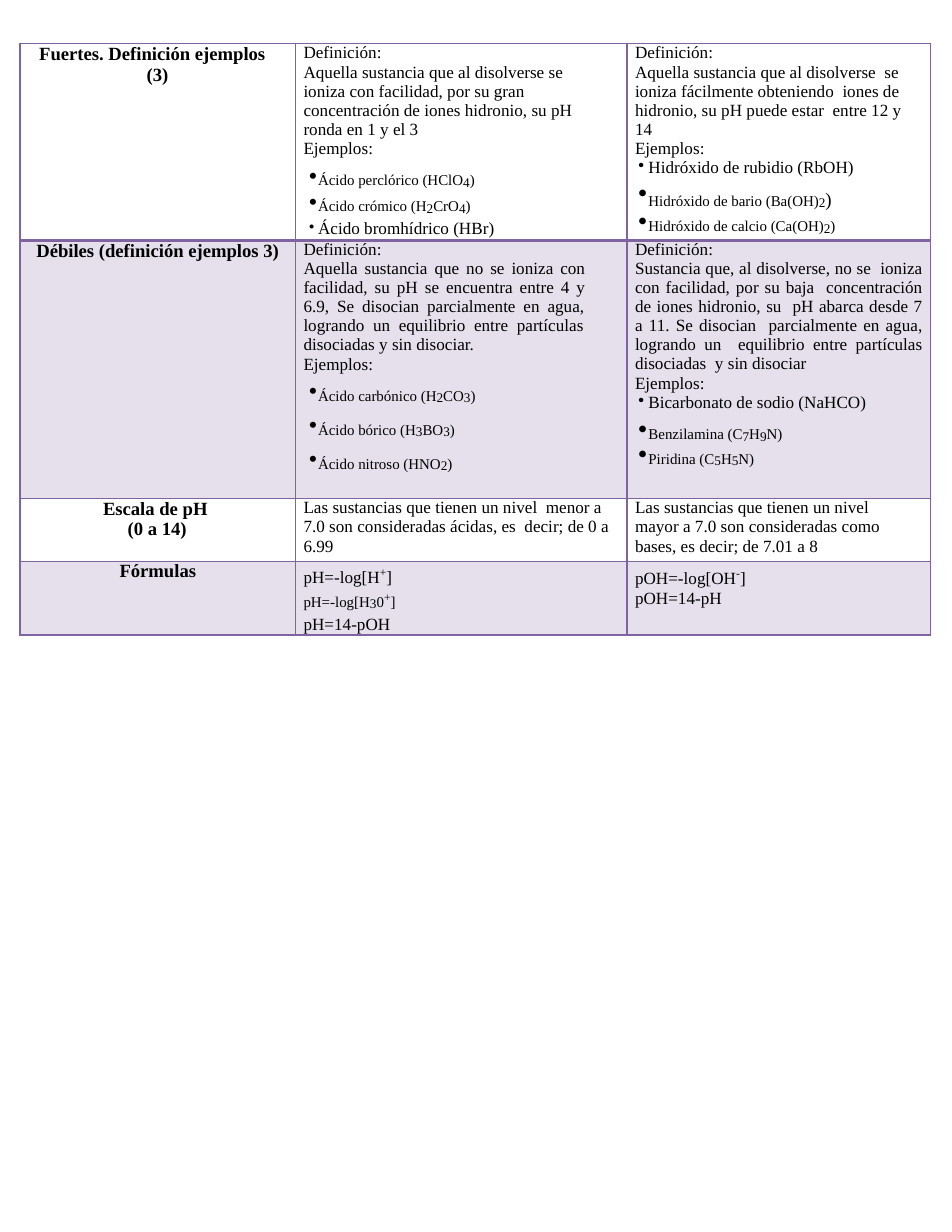
from dataclasses import dataclass

from lxml import etree
from pptx import Presentation
from pptx.dml.color import RGBColor
from pptx.enum.text import PP_ALIGN
from pptx.oxml.ns import qn
from pptx.util import Inches, Pt

CENTER, JUSTIFY, LEFT = PP_ALIGN.CENTER, PP_ALIGN.JUSTIFY, PP_ALIGN.LEFT


@dataclass(frozen=True)
class Theme:
    font: str = "Times New Roman"
    ink: RGBColor = RGBColor(0, 0, 0)
    accent: str = "8064A2"
    tint_alpha: int = 20
    heading: float = 12
    body: float = 11
    raised: tuple = (16.5, 5)
    closing: tuple = (21, 4)
    subscript: tuple = (8.5, 0)
    superscript: tuple = (12.8, 33)
    high_superscript: tuple = (12.8, 39)


@dataclass
class Para:
    runs: list
    size: float = 11
    bold: bool = False
    align: PP_ALIGN = LEFT
    left: float = 0.07
    indent: float = 0
    right: float = 0
    before: float = 0
    spacing: object = None
    bullet: int = 0


THEME = Theme()
COLUMN_WIDTHS = (2.46, 2.96, 2.71)
ROW_HEIGHTS = (1.76, 2.31, 0.56, 0.66)
TINTED_ROWS = (1, 3)
FORMULA_ROW = 3


def heading(text, **layout):
    return Para([(text, None)], THEME.heading, True, before=0.1, **layout)


def body(text, **layout):
    return Para([(text, None)], THEME.body, **layout)


def formula_runs(text):
    parts = text.split("_")
    return [(part, THEME.subscript if i % 2 else THEME.raised)
            for i, part in enumerate(parts)]


def acid(runs, before=0, spacing=None):
    return Para(runs, left=0.2, indent=-0.08, before=before, spacing=spacing, bullet=91)


def base(runs, before=0.1, spacing=None):
    return Para(runs, left=0.19, indent=-0.09, before=before, spacing=spacing, bullet=100)


def definition(text, examples, right, align=LEFT):
    return [body("Definición:", before=0.1), body(text, right=right, align=align),
            body("Ejemplos:", before=0.1), *examples]


ROWS = [
    [
        [heading("Fuertes. Definición ejemplos  (3)", left=1.13, indent=-0.96, right=0.2)],
        definition(
            "Aquella sustancia que al disolverse se  ioniza con facilidad, por su gran  "
            "concentración de iones hidronio, su pH  ronda en 1 y el 3",
            [acid(formula_runs("Ácido perclórico (HClO_4_)"), 4),
             acid(formula_runs("Ácido crómico (H_2_CrO_4_)"), 3.6, Pt(13.1)),
             acid([("Ácido bromhídrico (HBr)", None)], spacing=Pt(12.4))], 0.3),
        definition(
            "Aquella sustancia que al disolverse  se ioniza fácilmente obteniendo  iones de "
            "hidronio, su pH puede estar  entre 12 y 14",
            [base([("Hidróxido de rubidio (RbOH)", None)]),
             base(formula_runs("Hidróxido de bario (Ba(OH)_2")
                  + [(")", THEME.closing)], 0.9),
             base(formula_runs("Hidróxido de calcio (Ca(OH)_2_)"), 3, Pt(12.2))], 0.18),
    ],
    [
        [heading("Débiles (definición ejemplos 3)", left=0, align=CENTER)],
        definition(
            "Aquella sustancia que no se ioniza con  facilidad, su pH se encuentra entre 4 y  "
            "6.9, Se disocian parcialmente en agua,  logrando un equilibrio entre partículas  "
            "disociadas y sin disociar.",
            [acid(formula_runs("Ácido carbónico (H_2_CO_3_)"), 4),
             acid(formula_runs("Ácido bórico (H_3_BO_3_)"), 3.6),
             acid(formula_runs("Ácido nitroso (HNO_2_)"), 3.6)], 0.31, JUSTIFY),
        definition(
            "Sustancia que, al disolverse, no se  ioniza con facilidad, por su baja  "
            "concentración de iones hidronio, su  pH abarca desde 7 a 11. Se disocian  "
            "parcialmente en agua, logrando un  equilibrio entre partículas disociadas  "
            "y sin disociar",
            [base([("Bicarbonato de sodio (NaHCO)", None)]),
             base(formula_runs("Benzilamina (C_7_H_9_N)"), 4),
             base(formula_runs("Piridina (C_5_H_5_N)"), 3.6, Pt(12.2))], 0.07, JUSTIFY),
    ],
    [
        [heading("Escala de pH  (0 a 14)", left=0.96, indent=-0.22, right=0.72)],
        [body("Las sustancias que tienen un nivel  menor a 7.0 son consideradas ácidas, es  "
              "decir; de 0 a 6.99", right=0.1)],
        [body("Las sustancias que tienen un nivel  mayor a 7.0 son consideradas como  "
              "bases, es decir; de 7.01 a 8", right=0.3)],
    ],
    [
        [heading("Fórmulas", left=0, align=CENTER)],
        [Para([("pH=-log[H", None), ("+", THEME.superscript), ("]", None)], before=3.1),
         Para(formula_runs("pH=-log[H_3_0")
              + [("+", THEME.high_superscript), ("]  ", THEME.raised), ("pH=14-pOH", None)],
              right=1.58, before=4.5, spacing=Pt(12.8))],
        [Para([("pOH=-log[OH", None), ("-", THEME.superscript), ("]  pOH=14-pH", None)],
              right=1.2, before=2.5, spacing=1.04)],
    ],
]


def write_paragraph(paragraph, content):
    properties = paragraph._p.get_or_add_pPr()
    for name, length in (("marL", content.left), ("marR", content.right),
                         ("indent", content.indent)):
        properties.set(name, str(int(Inches(length))))
    if content.bullet:
        etree.SubElement(properties, qn("a:buSzPct"), val=str(content.bullet * 1000))
        etree.SubElement(properties, qn("a:buChar"), char="•")
    paragraph.alignment = content.align
    paragraph.space_before = Pt(content.before)
    if content.spacing:
        paragraph.line_spacing = content.spacing
    font = paragraph.font
    font.name, font.size, font.bold = THEME.font, Pt(content.size), content.bold
    font.color.rgb = THEME.ink
    for text, script in content.runs:
        run = paragraph.add_run()
        run.text = text
        if script:
            size, baseline = script
            run.font.size = Pt(size)
            run.font._element.set("baseline", str(baseline * 1000))


def add_solid(parent, color):
    fill = etree.SubElement(parent, qn("a:solidFill"))
    return etree.SubElement(fill, qn("a:srgbClr"), val=color)


def style_cell(cell, row):
    properties = cell._tc.get_or_add_tcPr()
    widths = {"L": 1, "R": 1, "T": 2 if row == 1 else 1, "B": 2 if row == 0 else 1}
    for side, width in widths.items():
        border = etree.SubElement(properties, qn(f"a:ln{side}"), w=str(int(Pt(width))))
        add_solid(border, THEME.accent)
    if row in TINTED_ROWS:
        tint = add_solid(properties, THEME.accent)
        etree.SubElement(tint, qn("a:alpha"), val=str(THEME.tint_alpha * 1000))
    else:
        cell.fill.background()


def add_comparison_table(slide, left, top, width, height):
    table = slide.shapes.add_table(len(ROW_HEIGHTS), len(COLUMN_WIDTHS),
                                   left, top, width, height).table
    table.first_row = table.horz_banding = False
    for column, share in zip(table.columns, COLUMN_WIDTHS):
        column.width = int(width * share / sum(COLUMN_WIDTHS))
    for row, share in zip(table.rows, ROW_HEIGHTS):
        row.height = int(height * share / sum(ROW_HEIGHTS))
    for r, row in enumerate(ROWS):
        for c, paragraphs in enumerate(row):
            cell = table.cell(r, c)
            cell.margin_left = cell.margin_right = cell.margin_bottom = 0
            cell.margin_top = Inches(0.04 if r == FORMULA_ROW and c else 0)
            style_cell(cell, r)
            frame = cell.text_frame
            for i, content in enumerate(paragraphs):
                write_paragraph(frame.add_paragraph() if i else frame.paragraphs[0], content)


def main():
    presentation = Presentation()
    presentation.slide_width, presentation.slide_height = Inches(8.5), Inches(11)
    slide = presentation.slides.add_slide(presentation.slide_layouts[6])
    add_comparison_table(slide, Inches(0.18), Inches(0.39), Inches(8.13), Inches(5.28))
    presentation.save("out.pptx")


if __name__ == "__main__":
    main()
